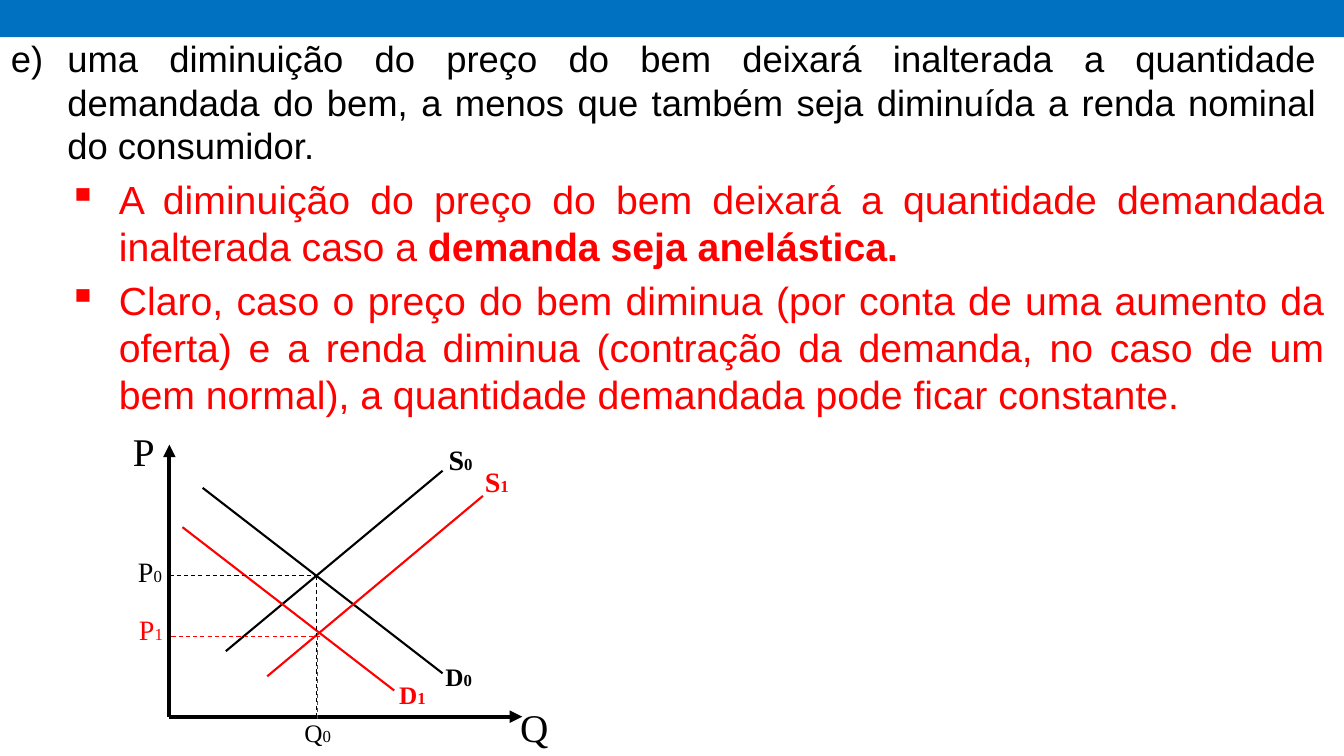
import pptx
import pptx.dml.color
import pptx.enum.dml
import pptx.enum.shapes
import pptx.enum.text
import pptx.oxml
import pptx.oxml.ns
import pptx.util

Inches = pptx.util.Inches
Pt = pptx.util.Pt
COLORS = {"black": "000000", "red": "FF0000", "blue": "0070C0"}


def color_of(name):
    return pptx.dml.color.RGBColor.from_string(COLORS[name])


def add_run(paragraph, text, size, color="black", font="Arial", bold=False):
    run = paragraph.add_run()
    run.text = text
    run.font.size = Pt(size)
    run.font.name = font
    run.font.bold = bold
    run.font.color.rgb = color_of(color)


def add_element(parent, tag, **attributes):
    element = pptx.oxml.parse_xml(f"<a:{tag} {pptx.oxml.ns.nsdecls('a')}/>")
    for name, value in attributes.items():
        element.set(name, value)
    parent.append(element)


class SlideBuilder:
    """Draw styled elements on the current slide."""

    def __init__(self, slide):
        self.slide = slide
        self.label_font = "Times New Roman"

    def band(self, left, top, width, height, color):
        shape = self.slide.shapes.add_shape(
            pptx.enum.shapes.MSO_SHAPE.RECTANGLE,
            Inches(left), Inches(top), Inches(width), Inches(height))
        shape.shadow.inherit = False
        shape.fill.solid()
        shape.fill.fore_color.rgb = color_of(color)
        shape.line.fill.background()

    def text_box(self, left, top, width, height):
        shape = self.slide.shapes.add_textbox(
            Inches(left), Inches(top), Inches(width), Inches(height))
        shape.text_frame.word_wrap = True
        return shape.text_frame

    def list_box(self, box, items, indent, size, color, bullet, gap=0):
        frame = self.text_box(*box)
        for index, runs in enumerate(items):
            paragraph = frame.add_paragraph() if index else frame.paragraphs[0]
            paragraph.alignment = pptx.enum.text.PP_ALIGN.JUSTIFY
            if index:
                paragraph.space_before = Pt(gap)
            properties = paragraph._p.get_or_add_pPr()
            properties.set("marL", str(Inches(indent)))
            properties.set("indent", str(-Inches(indent)))
            tag, attributes = bullet
            add_element(properties, tag, **attributes)
            for text, bold in runs:
                add_run(paragraph, text, size, color, bold=bold)

    def label(self, left, top, letter, size, subscript="", color="black",
              bold=False, width=0.79, height=0.44):
        paragraph = self.text_box(left, top, width, height).paragraphs[0]
        add_run(paragraph, letter, size, color, self.label_font, bold)
        if subscript:
            add_run(paragraph, subscript, 12, color, self.label_font, bold)

    def line(self, start, end, color="black", width=1.5, dashed=False, arrow=False):
        connector = self.slide.shapes.add_connector(
            pptx.enum.shapes.MSO_CONNECTOR.STRAIGHT,
            *(Inches(value) for value in (*start, *end)))
        connector.line.color.rgb = color_of(color)
        connector.line.width = Pt(width)
        if dashed:
            connector.line.dash_style = pptx.enum.dml.MSO_LINE.DASH
        if arrow:
            add_element(connector.line._get_or_add_ln(), "tailEnd", type="triangle")
        add_element(connector._element.spPr, "effectLst")


def main():
    presentation = pptx.Presentation()
    presentation.slide_width = Inches(13.33)
    presentation.slide_height = Inches(7.5)
    slide = presentation.slides.add_slide(presentation.slide_layouts[6])
    builder = SlideBuilder(slide)

    builder.band(0, -0.03, 13.33, 0.4, "blue")
    builder.list_box(
        (0.01, 0.31, 13.16, 1.4),
        [[("uma diminuição do preço do bem deixará inalterada a quantidade "
           "demandada do bem, a menos que também seja diminuída a renda "
           "nominal do consumidor.", False)]],
        0.56, 26, "black",
        ("buAutoNum", {"type": "alphaLcParenR", "startAt": "5"}))
    builder.list_box(
        (0.58, 1.69, 12.65, 2.52),
        [[("A diminuição do preço do bem deixará a quantidade demandada "
           "inalterada caso a ", False), ("demanda seja anelástica.", True)],
         [("Claro, caso o preço do bem diminua (por conta de uma aumento da "
           "oferta) e a renda diminua (contração da demanda, no caso de um bem "
           "normal), a quantidade demandada pode ficar constante.", False)]],
        0.5, 28, "red", ("buChar", {"char": "▪"}), gap=5)

    origin = (1.68, 7.11)
    for axis_end in ((1.68, 4.41), (5.18, 7.11)):
        builder.line(origin, axis_end, width=3, arrow=True)

    curves = [
        ((2.01, 4.84), (4.39, 6.68), "black"),
        ((2.24, 6.46), (4.39, 4.67), "black"),
        ((2.65, 6.71), (4.79, 4.92), "red"),
        ((1.81, 5.23), (3.91, 6.85), "red"),
    ]
    for start, end, color in curves:
        builder.line(start, end, color)

    guides = [
        ((1.68, 5.71), (3.14, 5.71), "black"),
        ((3.14, 5.71), (3.14, 7.11), "black"),
        ((1.7, 6.31), (3.17, 6.31), "red"),
        ((3.15, 6.31), (3.15, 7.13), "red"),
    ]
    for start, end, color in guides:
        builder.line(start, end, color, 0.75, dashed=True)

    for left, top, letter in ((1.22, 4.19, "P"), (5.06, 6.93, "Q")):
        builder.label(left, top, letter, 28, width=0.23, height=0.57)

    labels = [
        (4.35, 4.34, "S", 20, "0", "black", True),
        (4.32, 6.51, "D", 18, "0", "black", True),
        (4.71, 4.56, "S", 20, "1", "red", True),
        (3.86, 6.69, "D", 18, "1", "red", True),
        (1.27, 5.45, "P", 20, "0", "black", False),
        (1.28, 6.03, "P", 20, "1", "red", False),
        (2.92, 7.07, "Q", 18, "0", "black", False),
    ]
    for label in labels:
        builder.label(*label)

    presentation.save("out.pptx")


if __name__ == "__main__":
    main()
